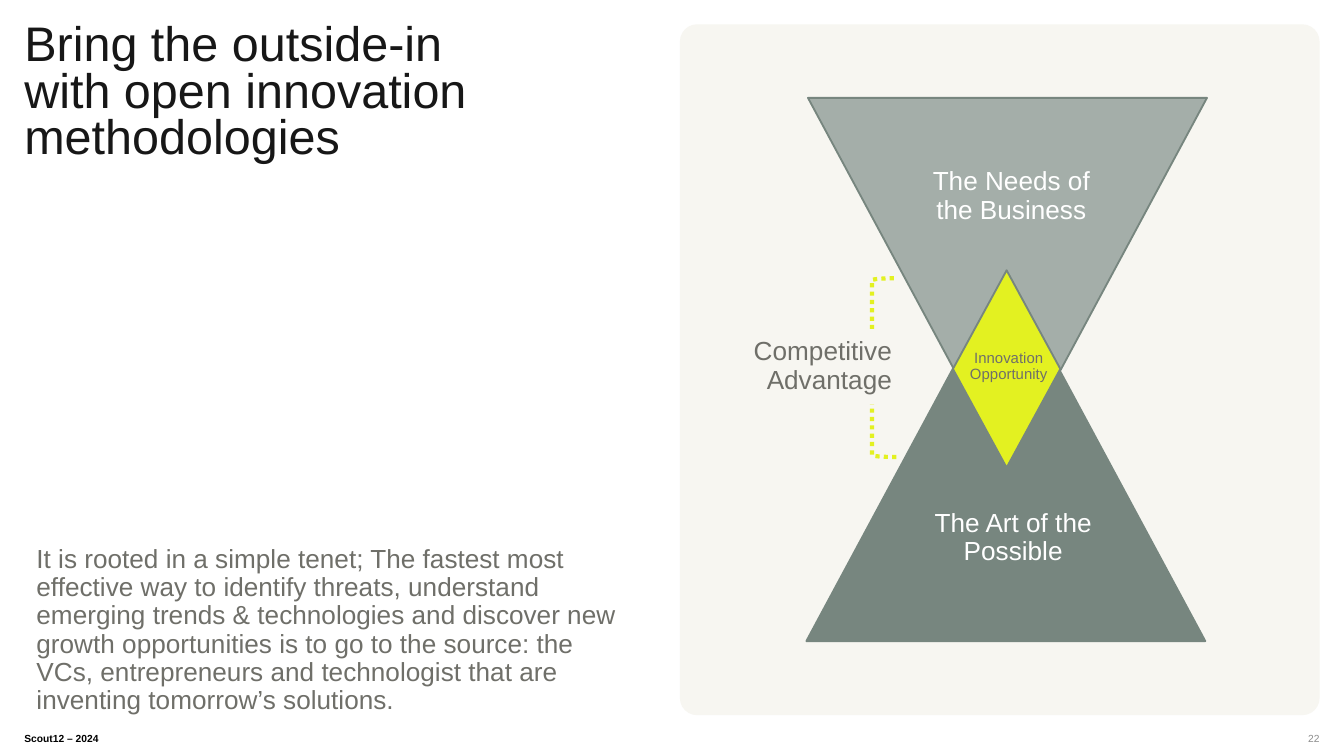
from dataclasses import dataclass

from pptx import Presentation
from pptx.dml.color import RGBColor
from pptx.enum import dml, shapes, text
from pptx.util import Cm, Pt


@dataclass(frozen=True)
class Theme:
    font: str = "Arial"
    ink: str = "171717"
    black: str = "000000"
    white: str = "FFFFFF"
    grey: str = "6F6F69"
    pale_grey: str = "8C8C8C"
    panel: str = "F7F6F1"
    sage: str = "77867F"
    light_sage: str = "A4AEA9"
    lime: str = "E3F121"
    title_size: float = 26
    body_size: float = 14
    small_size: float = 8
    footer_size: float = 5.5


theme = Theme()
ALIGN = text.PP_ALIGN
ANCHOR = text.MSO_ANCHOR
SHAPE = shapes.MSO_SHAPE

deck = Presentation()
deck.slide_width, deck.slide_height = Cm(25.4), Cm(14.29)
page = deck.slides.add_slide(deck.slide_layouts[6])


def add_figure(kind, place, fill=None, line=None, weight=1):
    figure = page.shapes.add_shape(kind, *map(Cm, place))
    figure.shadow.inherit = False
    if fill:
        figure.fill.solid()
        figure.fill.fore_color.rgb = RGBColor.from_string(fill)
    else:
        figure.fill.background()
    if line:
        figure.line.color.rgb = RGBColor.from_string(line)
        figure.line.width = Pt(weight)
    else:
        figure.line.fill.background()
    return figure


def write(words, size, color, place=None, box=None, align=ALIGN.LEFT,
          anchor=ANCHOR.TOP, spacing=1.0, indent=0, bold=False):
    box = box or page.shapes.add_textbox(*map(Cm, place))
    frame = box.text_frame
    frame.word_wrap = True
    frame.vertical_anchor = anchor
    frame.margin_left = frame.margin_right = 0
    frame.margin_top = frame.margin_bottom = 0
    para = frame.paragraphs[0]
    para.text = words
    para.alignment = align
    para.line_spacing = spacing
    if indent:
        para._p.get_or_add_pPr().set("marL", str(Cm(indent)))
    for span in para.runs:
        span.font.name = theme.font
        span.font.size = Pt(size)
        span.font.bold = bold
        span.font.color.rgb = RGBColor.from_string(color)


# Footer
write("Scout12 – 2024", theme.footer_size, theme.black,
      (0.46, 13.84, 1.78, 0.2), bold=True)
write("22", theme.footer_size, theme.pale_grey,
      (23.42, 13.84, 1.52, 0.2), align=ALIGN.RIGHT)

# Panel behind the diagram
panel = add_figure(SHAPE.ROUNDED_RECTANGLE, (12.85, 0.46, 12.09, 13.06), theme.panel)
panel.adjustments[0] = 0.027

# Title and body
write("Bring the outside-in\vwith open innovation methodologies",
      theme.title_size, theme.ink, (0.46, 0.46, 9.88, 6.71), spacing=0.8)
write("It is rooted in a simple tenet; The fastest most effective way to identify "
      "threats, understand emerging trends & technologies and discover new growth "
      "opportunities is to go to the source: the VCs, entrepreneurs and technologist "
      "that are inventing tomorrow’s solutions.",
      theme.body_size, theme.grey, (0.46, 10.29, 11.56, 3.23),
      anchor=ANCHOR.BOTTOM, spacing=0.9, indent=0.23)

# Overlapping triangles and the diamond they share
add_figure(SHAPE.ISOSCELES_TRIANGLE, (15.24, 5.11, 7.54, 7.01), theme.sage, theme.sage)
needs = add_figure(SHAPE.ISOSCELES_TRIANGLE, (15.27, 1.85, 7.54, 7.01),
                   theme.light_sage, theme.sage)
needs.rotation = 180
add_figure(SHAPE.DIAMOND, (18.01, 5.11, 2.03, 3.73), theme.lime, theme.sage)

# Diagram labels
for words, size, color, place in (
    ("Innovation Opportunity", theme.small_size, theme.grey, (17.73, 6.63, 2.44, 0.61)),
    ("The Needs of the Business", theme.body_size, theme.white, (17.12, 3.18, 3.76, 1.07)),
    ("The Art of the Possible", theme.body_size, theme.white, (17.17, 9.63, 3.73, 1.07)),
):
    write(words, size, color, place, align=ALIGN.CENTER,
          anchor=ANCHOR.BOTTOM, spacing=0.9, indent=0.23)

# Dotted bracket, interrupted by its label
bracket = add_figure(SHAPE.LEFT_BRACKET, (16.48, 5.26, 0.46, 3.38),
                     line=theme.lime, weight=2.25)
bracket.line.dash_style = dml.MSO_LINE.ROUND_DOT
advantage = add_figure(SHAPE.RECTANGLE, (13.61, 6.22, 3.25, 1.42), theme.panel)
write("Competitive Advantage", theme.body_size, theme.grey, box=advantage,
      align=ALIGN.RIGHT, anchor=ANCHOR.MIDDLE, spacing=0.9, indent=0.23)

deck.save("out.pptx")
